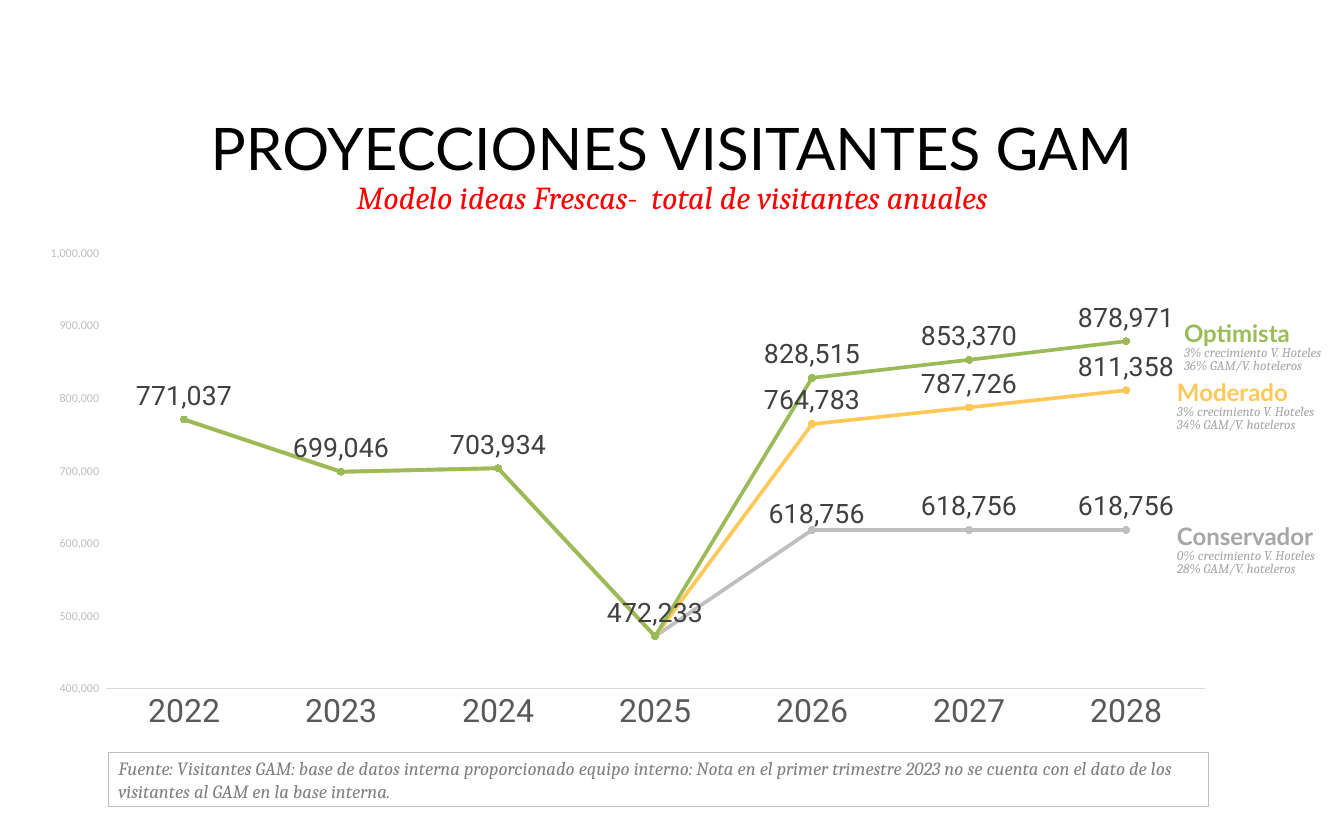
from dataclasses import dataclass

from lxml.etree import SubElement
from pptx import Presentation
from pptx.chart.data import CategoryChartData
from pptx.dml.color import RGBColor
from pptx.enum.chart import XL_CHART_TYPE as Kind, XL_LABEL_POSITION as Pos
from pptx.enum.chart import XL_MARKER_STYLE as Mark, XL_TICK_MARK as Tick
from pptx.enum.shapes import MSO_SHAPE as Form
from pptx.enum.text import MSO_ANCHOR as Anchor, PP_ALIGN as Align
from pptx.oxml import parse_xml
from pptx.oxml.ns import nsdecls, qn
from pptx.util import Pt

PX = 9525
COLORS = {
    "black": "000000", "white": "FFFFFF", "red": "FF0000", "green": "9BBB59",
    "amber": "FFC859", "silver": "BFBFBF", "gray": "A6A6A6", "note": "808080",
    "year": "595959", "label": "404040", "axis": "D9D9D9", "blue": "8EB4E3",
}
FORMAT = '_-* #,##0_-;\\-* #,##0_-;_-* "-"??_-;_-@_'
YEARS = [str(year) for year in range(2022, 2029)]
PAST = [771037, 699046, 703934, 472233]


@dataclass
class Case:
    name: str
    growth: int
    share: int
    line: str
    ink: str
    box: tuple[int, int, int, int]
    future: list[int]


CASES = [
    Case("Conservador", 0, 28, "silver", "gray", (1165, 520, 179, 62),
         [618756, 618756, 618756]),
    Case("Moderado", 3, 34, "amber", "amber", (1165, 376, 179, 62),
         [764783, 787726, 811358]),
    Case("Optimista", 3, 36, "green", "green", (1172, 317, 190, 62),
         [828515, 853370, 878971]),
]


def rgb(name: str) -> RGBColor:
    return RGBColor.from_string(COLORS[name])


def px(*sizes: int) -> list[int]:
    return [size * PX for size in sizes]


def style(font, face: str, size: int, color: str, bold=False, italic=False) -> None:
    font.name, font.size = face, Pt(size)
    font.bold, font.italic = bold, italic
    font.color.rgb = rgb(color)


def pad(frame, side: int, end: int) -> None:
    frame.word_wrap = True
    frame.margin_left = frame.margin_right = side * PX
    frame.margin_top = frame.margin_bottom = end * PX


def head(shape, text: str, face: str, size: int, color: str, italic=False) -> None:
    """Fill a centred heading line."""
    frame = shape.text_frame
    pad(frame, 12, 6)
    frame.vertical_anchor = Anchor.TOP
    para = frame.paragraphs[0]
    para.text, para.alignment = text, Align.CENTER
    style(para.font, face, size, color, italic=italic)


def add_note(slide, text: str) -> None:
    box = slide.shapes.add_shape(Form.RECTANGLE, *px(109, 752, 1100, 55))
    box.shadow.inherit = False
    box.fill.solid()
    box.fill.fore_color.rgb = rgb("white")
    box.line.color.rgb = rgb("silver")
    box.line.width = Pt(0.75)
    box.text_frame.word_wrap = True
    para = box.text_frame.paragraphs[0]
    para.text, para.alignment = text, Align.LEFT
    style(para.font, "Cambria", 14, "note", italic=True)


def add_case(slide, case: Case) -> None:
    frame = slide.shapes.add_textbox(*px(*case.box)).text_frame
    pad(frame, 12, 7)
    lines = [case.name, f"{case.growth}% crecimiento V. Hoteles",
             f"{case.share}% GAM/V. hoteleros"]
    for i, line in enumerate(lines):
        para = frame.add_paragraph() if i else frame.paragraphs[0]
        para.text, para.line_spacing = line, 0.8
        if i:
            style(para.font, "Cambria", 10, "gray", italic=True)
        else:
            style(para.font, "Lato", 18, case.ink, bold=True)


def paint(dot, color: str) -> None:
    """Colour the marker of a series or a point."""
    dot.style, dot.size = Mark.CIRCLE, 5
    dot.format.fill.solid()
    dot.format.fill.fore_color.rgb = rgb(color)
    dot.format.line.color.rgb = rgb(color)


def stroke(line, color: str) -> None:
    line.color.rgb, line.width = rgb(color), Pt(2.75)


def place(**sizes: float):
    """Make a manual layout element."""
    layout = parse_xml(f"<c:layout {nsdecls('c')}/>")
    manual = SubElement(layout, qn("c:manualLayout"))
    for tag, size in sizes.items():
        SubElement(manual, qn(f"c:{tag}")).set("val", str(size))
    return layout


def draw_line(series, case: Case) -> None:
    series.smooth = False
    stroke(series.format.line, case.line)
    paint(series.marker, case.line)
    labels = series.data_labels
    labels.show_value, labels.position = True, Pos.ABOVE
    labels.number_format, labels.number_format_is_linked = FORMAT, False
    style(labels.font, "Roboto", 20, "label")


def hide_past(series) -> None:
    """Drop the labels of the years that all cases share."""
    root = series.data_labels._element
    for i in range(len(PAST)):
        root.insert(i, parse_xml(
            f'<c:dLbl {nsdecls("c")}><c:idx val="{i}"/><c:delete val="1"/></c:dLbl>'))


def add_chart(slide) -> None:
    data = CategoryChartData(number_format=FORMAT)
    data.categories = YEARS
    for i, case in enumerate(CASES, 1):
        data.add_series(f"Series {i}", PAST + case.future)
    chart = slide.shapes.add_chart(
        Kind.LINE_MARKERS, *px(42, 239, 1178, 517), data).chart
    chart.has_title = chart.has_legend = False
    style(chart.font, "Calibri", 10, "black")
    area = chart._chartSpace.chart.plotArea
    for old in area.findall(qn("c:layout")):
        area.remove(old)
    area.insert(0, place(layoutTarget="inner", xMode="edge", yMode="edge",
                         x=0.054, y=0.028, w=0.933, h=0.842))

    years, scale = chart.category_axis, chart.value_axis
    for axis in (years, scale):
        axis.major_tick_mark = axis.minor_tick_mark = Tick.NONE
        axis.has_major_gridlines = False
    style(years.tick_labels.font, "Roboto", 24, "year")
    years.format.line.color.rgb = rgb("axis")
    years.format.line.width = Pt(0.75)
    style(scale.tick_labels.font, "Calibri", 9, "silver")
    scale.tick_labels.number_format = FORMAT
    scale.tick_labels.number_format_is_linked = False
    scale.format.line.fill.background()
    scale.minimum_scale, scale.maximum_scale = 400000, 1000000
    scale.major_unit = 100000

    plot = chart.plots[0]
    plot.vary_by_categories = False
    for series, case in zip(plot.series, CASES):
        draw_line(series, case)
    low, _, top = plot.series
    for i in range(1, len(PAST)):
        point = top.points[i]
        stroke(point.format.line, "green")
        paint(point.marker, "blue")

    label = low.points[len(PAST)].data_label
    style(label.font, "Roboto", 20, "label")
    label.position = Pos.ABOVE
    item = low.data_labels._element.find(qn("c:dLbl"))
    item.insert(1, place(x=0.004, y=0.015))
    hide_past(low)
    hide_past(top)


def main() -> None:
    deck = Presentation()
    deck.slide_width, deck.slide_height = px(1344, 816)
    slide = deck.slides.add_slide(deck.slide_layouts[5])
    title = slide.shapes.title
    title.left, title.top, title.width, title.height = px(0, 106, 1344, 83)
    head(title, "PROYECCIONES VISITANTES GAM", "Lato", 44, "black")
    model = slide.shapes.add_textbox(*px(0, 171, 1344, 51))
    head(model, "Modelo ideas Frescas-  total de visitantes anuales",
         "Cambria", 24, "red", italic=True)
    add_note(slide, "Fuente: Visitantes GAM: base de datos interna proporcionado "
             "equipo interno: Nota en el primer trimestre 2023 no se cuenta con "
             "el dato de los visitantes al GAM en la base interna.")
    for case in CASES:
        add_case(slide, case)
    add_chart(slide)
    deck.save("out.pptx")


if __name__ == "__main__":
    main()
